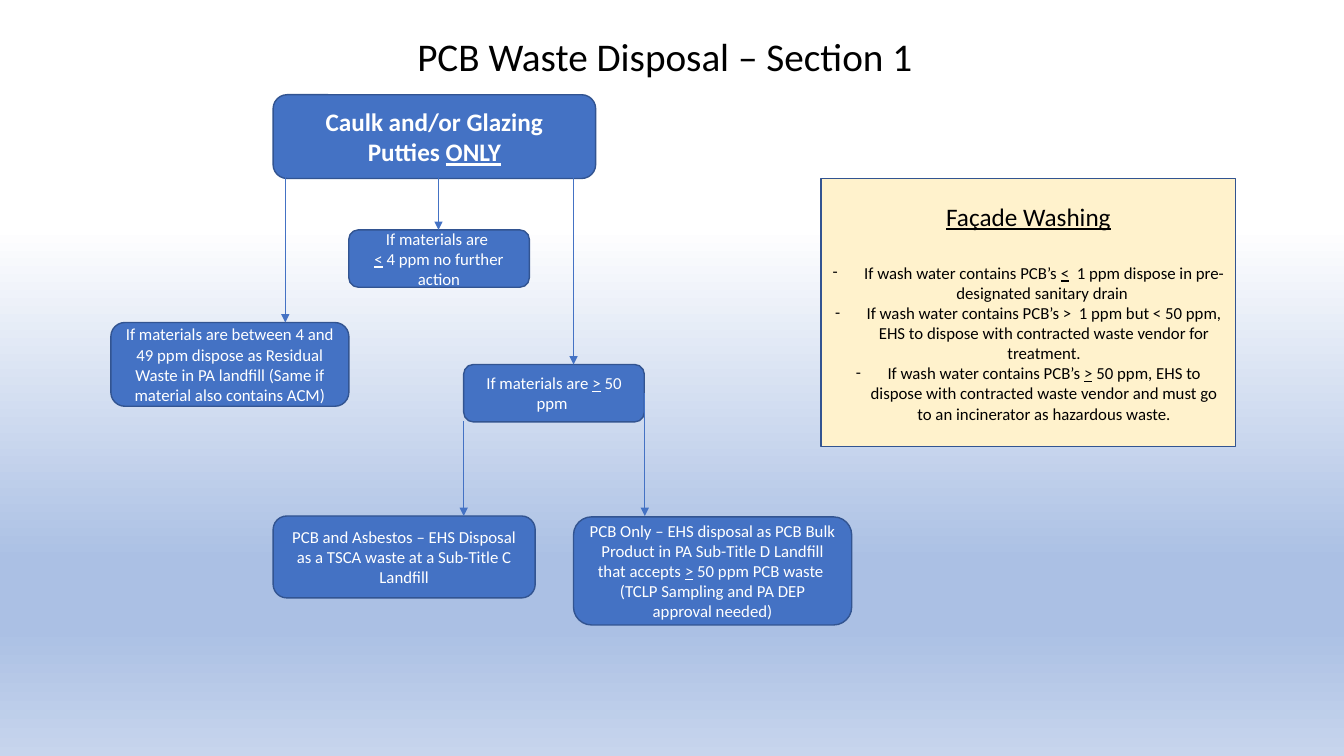
from copy import deepcopy
from dataclasses import dataclass

from lxml import etree
from pptx import Presentation
from pptx.dml.color import RGBColor
from pptx.enum.shapes import MSO_CONNECTOR, MSO_SHAPE as Shape
from pptx.enum.text import MSO_ANCHOR, PP_ALIGN
from pptx.oxml.ns import qn
from pptx.slide import Slide
from pptx.text.text import _Paragraph as Paragraph
from pptx.util import Pt

FONT = "Calibri"
BLUE, OUTLINE, CREAM = "4472C4", "325491", "FFF2CC"
WHITE, BLACK = "FFFFFF", "000000"
BACKGROUND = [(0.30, WHITE), (0.74, "ABC0E4"), (0.83, "ABC0E4"), (1.0, "C7D5ED")]


@dataclass
class Box:
    """Lengths are in points; text between underscores is underlined."""
    left: float
    top: float
    width: float
    height: float
    lines: list[str]
    kind: Shape = Shape.FLOWCHART_ALTERNATE_PROCESS
    fill: str = BLUE
    color: str = WHITE
    size: float = 12
    bold: bool = False


@dataclass
class Arrow:
    """A vertical arrow pointing down."""
    x: float
    top: float
    bottom: float


BOXES = [
    Box(195.1, 67.7, 230.4, 59.8, ["Caulk and/or Glazing Putties _ONLY_"],
        kind=Shape.ROUNDED_RECTANGLE, size=18, bold=True),
    Box(79.2, 230.4, 170, 59.8,
        ["If materials are between 4 and 49 ppm dispose as Residual Waste "
         "in PA landfill (Same if material also contains ACM)"]),
    Box(249.1, 164.2, 129, 41, ["If materials are ", "_<_ 4 ppm no further action"]),
    Box(331.2, 260.4, 129, 41, ["If materials are _>_ 50 ppm "]),
    Box(195.1, 368.6, 187.2, 58.5,
        ["PCB and Asbestos – EHS Disposal as a TSCA waste at a Sub-Title C Landfill"]),
    Box(409.7, 369.2, 198.7, 77.2,
        ["PCB Only – EHS disposal as PCB Bulk Product in PA Sub-Title D Landfill "
         "that accepts _>_ 50 ppm PCB waste ",
         "(TCLP Sampling and PA DEP approval needed)"]),
]

WASHING = Box(
    586.6, 127.4, 296, 191.5,
    ["_Façade Washing_",
     "If wash water contains PCB’s _<_  1 ppm dispose in pre-designated sanitary drain ",
     "If wash water contains PCB’s >  1 ppm but < 50 ppm, EHS to dispose with "
     "contracted waste vendor for treatment.",
     "If wash water contains PCB’s _>_ 50 ppm, EHS to dispose with contracted "
     "waste vendor and must go to an incinerator as hazardous waste."],
    kind=Shape.FLOWCHART_PROCESS, fill=CREAM, color=BLACK)

ARROWS = [
    Arrow(203.8, 105.1, 230.4),
    Arrow(313.2, 127.5, 164.2),
    Arrow(409.7, 93.6, 260.4),
    Arrow(331.2, 301, 368.6),
    Arrow(460.6, 280.8, 368.6),
]


def rgb(value: str) -> RGBColor:
    return RGBColor.from_string(value)


def paint_background(s: Slide) -> None:
    fill = s.background.fill
    fill.gradient()
    fill.gradient_angle = 270
    gs_lst = next(s.element.iter(qn("a:gsLst")))
    while len(gs_lst) < len(BACKGROUND):
        gs_lst.append(deepcopy(gs_lst[0]))
    for stop, (position, color) in zip(fill.gradient_stops, BACKGROUND):
        stop.position = position
        stop.color.rgb = rgb(color)


def format_runs(p: Paragraph, size: float, color: str, bold: bool = False) -> None:
    p.alignment = PP_ALIGN.CENTER
    for r in p.runs:
        r.font.name, r.font.size, r.font.bold = FONT, Pt(size), bold
        r.font.color.rgb = rgb(color)


def add_title(s: Slide, text: str) -> None:
    sp = s.shapes.title
    sp.left, sp.top, sp.width, sp.height = Pt(159.1), Pt(19.4), Pt(631.4), Pt(41)
    sp.text_frame.text = text
    format_runs(sp.text_frame.paragraphs[0], 28, BLACK)


def add_box(s: Slide, box: Box) -> list[Paragraph]:
    """Draw the box and return its paragraphs."""
    sp = s.shapes.add_shape(box.kind, Pt(box.left), Pt(box.top),
                            Pt(box.width), Pt(box.height))
    sp.shadow.inherit = False
    sp.fill.solid()
    sp.fill.fore_color.rgb = rgb(box.fill)
    sp.line.color.rgb = rgb(OUTLINE)
    sp.line.width = Pt(1)
    tf = sp.text_frame
    tf.word_wrap = True
    tf.vertical_anchor = MSO_ANCHOR.MIDDLE
    for i, line in enumerate(box.lines):
        p = tf.add_paragraph() if i else tf.paragraphs[0]
        for j, part in enumerate(line.split("_")):
            if part:
                r = p.add_run()
                r.text = part
                r.font.underline = j % 2 == 1
        format_runs(p, box.size, box.color, box.bold)
    return list(tf.paragraphs)


def add_dash(p: Paragraph) -> None:
    pPr = p._p.get_or_add_pPr()
    pPr.set("marL", str(Pt(22.5)))
    pPr.set("indent", str(Pt(-22.5)))
    etree.SubElement(pPr, qn("a:buFont"), typeface=FONT)
    etree.SubElement(pPr, qn("a:buChar"), char="-")


def add_washing_panel(s: Slide) -> None:
    heading, *rules = add_box(s, WASHING)
    heading.space_after = Pt(22)
    for r in heading.runs:
        r.font.size = Pt(18)
    for p in rules:
        add_dash(p)


def add_arrow(s: Slide, arrow: Arrow) -> None:
    line = s.shapes.add_connector(MSO_CONNECTOR.STRAIGHT, Pt(arrow.x), Pt(arrow.top),
                                  Pt(arrow.x), Pt(arrow.bottom))
    line.line.color.rgb = rgb(BLUE)
    line.line.width = Pt(0.5)
    etree.SubElement(line.line._get_or_add_ln(), qn("a:tailEnd"), type="triangle")
    etree.SubElement(line._element.spPr, qn("a:effectLst"))


def main() -> None:
    prs = Presentation()
    prs.slide_width, prs.slide_height = Pt(960), Pt(540)
    s = prs.slides.add_slide(prs.slide_layouts[5])
    paint_background(s)
    add_title(s, "PCB Waste Disposal – Section 1")
    for box in BOXES:
        add_box(s, box)
    add_washing_panel(s)
    for arrow in ARROWS:
        add_arrow(s, arrow)
    prs.save("out.pptx")


if __name__ == "__main__":
    main()
